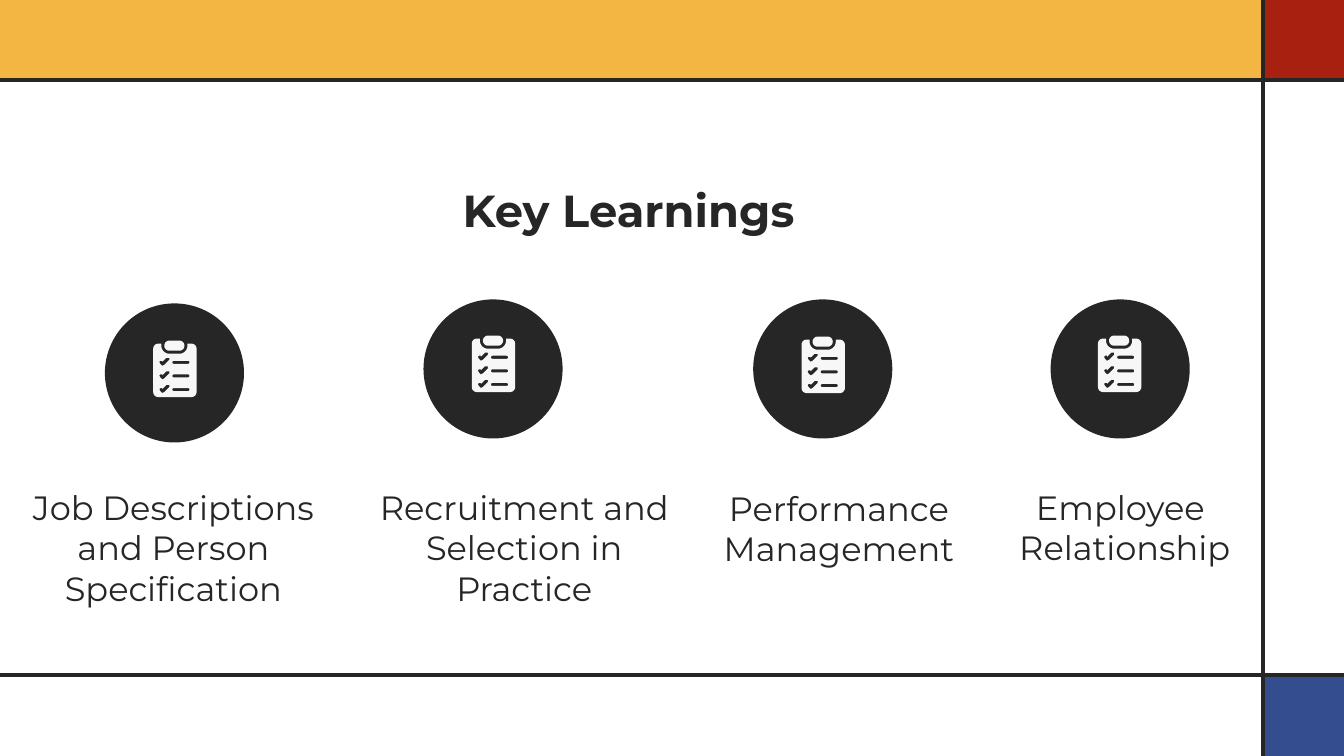
from math import cos, radians, sin

from lxml.etree import SubElement
from pptx import Presentation
from pptx.dml.color import RGBColor
from pptx.enum.shapes import MSO_CONNECTOR, MSO_SHAPE
from pptx.enum.text import MSO_ANCHOR, MSO_AUTO_SIZE, PP_ALIGN
from pptx.oxml.ns import qn
from pptx.util import Inches, Pt

DARK = "262626"
PALE = "F7F7F7"
YELLOW = "F4B643"
RED = "A82110"
BLUE = "344D8F"

SLIDE_WIDTH, SLIDE_HEIGHT = 13.33, 7.5
BAND = 0.8
RULE_X = 12.53
CIRCLE_SIZE = 1.38

BANDS = [
    (RULE_X, 6.7, BAND, BLUE),
    (RULE_X, 0, BAND, RED),
    (0, 0, RULE_X, YELLOW),
]
RULES = [
    (SLIDE_WIDTH, 0.79, 0, 0.79),
    (SLIDE_WIDTH, 6.7, 0, 6.7),
    (RULE_X, 0, RULE_X, SLIDE_HEIGHT),
]
LEARNINGS = [
    ("Job Descriptions and Person Specification",
     (0.07, 4.78, 3.3, 1.31), (1.04, 3.01), (1.52, 3.38)),
    ("Recruitment and Selection in Practice",
     (3.55, 4.78, 3.3, 1.31), (4.2, 2.97), (4.68, 3.33)),
    ("Performance Management",
     (6.67, 4.79, 3.3, 0.91), (7.47, 2.97), (7.95, 3.34)),
    ("Employee \nRelationship",
     (10, 4.78, 2.31, 0.91), (10.42, 2.97), (10.89, 3.33)),
]
CHECK_MARK = [
    (0.16, 0.19), (0.11, 0.24), (0.09, 0.25), (0.07, 0.23), (0.06, 0.21),
    (0.07, 0.2), (0.09, 0.2), (0.09, 0.21), (0.13, 0.17), (0.16, 0.17),
]


def color(value):
    return RGBColor.from_string(value)


def paint(shape, fill):
    shape.shadow.inherit = False
    shape.fill.solid()
    shape.fill.fore_color.rgb = color(fill)
    shape.line.fill.background()


def place(shape, box):
    for name, value in zip(("left", "top", "width", "height"), box):
        setattr(shape, name, Inches(value))


def add_shape(slide, kind, box, fill):
    shape = slide.shapes.add_shape(kind, *map(Inches, box))
    paint(shape, fill)


def add_rule(slide, ends):
    rule = slide.shapes.add_connector(MSO_CONNECTOR.STRAIGHT, *map(Inches, ends))
    rule.line.color.rgb = color(DARK)
    rule.line.width = Pt(2.75)
    SubElement(rule._element.spPr, qn("a:effectLst"))


def write_text(shape, text, size, bold):
    frame = shape.text_frame
    frame.text = text
    frame_format = {
        "word_wrap": True,
        "vertical_anchor": MSO_ANCHOR.TOP,
        "auto_size": MSO_AUTO_SIZE.SHAPE_TO_FIT_TEXT,
    }
    for name, value in frame_format.items():
        setattr(frame, name, value)
    font_format = {"name": "Montserrat", "size": Pt(size), "bold": bold}
    for paragraph in frame.paragraphs:
        paragraph.alignment = PP_ALIGN.CENTER
        for run in paragraph.runs:
            for name, value in font_format.items():
                setattr(run.font, name, value)
            run.font.color.rgb = color(DARK)


def add_title(slide, text, box):
    title = slide.shapes.title
    place(title, box)
    write_text(title, text, 32, True)


def add_label(slide, text, box):
    label = slide.shapes.add_textbox(*map(Inches, box))
    write_text(label, text, 24, False)


def arc(center_x, center_y, radius, start, end, steps=8):
    angles = [radians(start + (end - start) * step / steps) for step in range(steps + 1)]
    return [(center_x + radius * cos(a), center_y + radius * sin(a)) for a in angles]


def rounded_outline(left, top, width, height, radius):
    near_x, far_x = left + radius, left + width - radius
    near_y, far_y = top + radius, top + height - radius
    corners = [(near_x, near_y, 180), (far_x, near_y, 270),
               (far_x, far_y, 0), (near_x, far_y, 90)]
    return [point for x, y, start in corners
            for point in arc(x, y, radius, start, start + 90)]


def board_outline():
    notch = [(0.08, 0.03), *arc(0.16, 0.05, 0.08, 180, 90),
             *arc(0.26, 0.05, 0.08, 90, 0), (0.34, 0.03)]
    body = rounded_outline(0, 0.03, 0.43, 0.53, 0.05)
    return body[:9] + notch + body[9:]


def add_outlines(slide, outlines, origin):
    first_x, first_y = map(Inches, outlines[0][0])
    builder = slide.shapes.build_freeform(first_x, first_y, scale=1.0)
    for index, outline in enumerate(outlines):
        points = [(Inches(x), Inches(y)) for x, y in outline]
        if index:
            builder.move_to(*points[0])
        builder.add_line_segments(points[1:], close=True)
    shape = builder.convert_to_shape(*map(Inches, origin))
    paint(shape, PALE)
    return shape


def add_clipboard(slide, origin):
    outlines = [board_outline()]
    for row in range(3):
        drop = row * 0.27 / 2
        outlines.append([(x, y + drop) for x, y in CHECK_MARK])
        outlines.append(rounded_outline(0.19, 0.2 + drop, 0.17, 0.03, 0.03 / 2))
    clip = add_outlines(slide, [rounded_outline(0.11, 0, 0.2, 0.1, 0.05)], origin)
    board = add_outlines(slide, outlines, origin)
    slide.shapes.add_group_shape(shapes=[clip, board])


def add_learning(slide, text, label_box, circle_corner, icon_origin):
    circle_box = (*circle_corner, CIRCLE_SIZE, CIRCLE_SIZE)
    add_shape(slide, MSO_SHAPE.OVAL, circle_box, DARK)
    add_clipboard(slide, icon_origin)
    add_label(slide, text, label_box)


def main():
    presentation = Presentation()
    presentation.slide_width = Inches(SLIDE_WIDTH)
    presentation.slide_height = Inches(SLIDE_HEIGHT)
    slide = presentation.slides.add_slide(presentation.slide_layouts[5])
    for left, top, width, fill in BANDS:
        add_shape(slide, MSO_SHAPE.RECTANGLE, (left, top, width, BAND), fill)
    for ends in RULES:
        add_rule(slide, ends)
    add_title(slide, "Key Learnings", (2.54, 1.76, 7.39, 0.64))
    for learning in LEARNINGS:
        add_learning(slide, *learning)
    presentation.save("out.pptx")


if __name__ == "__main__":
    main()
